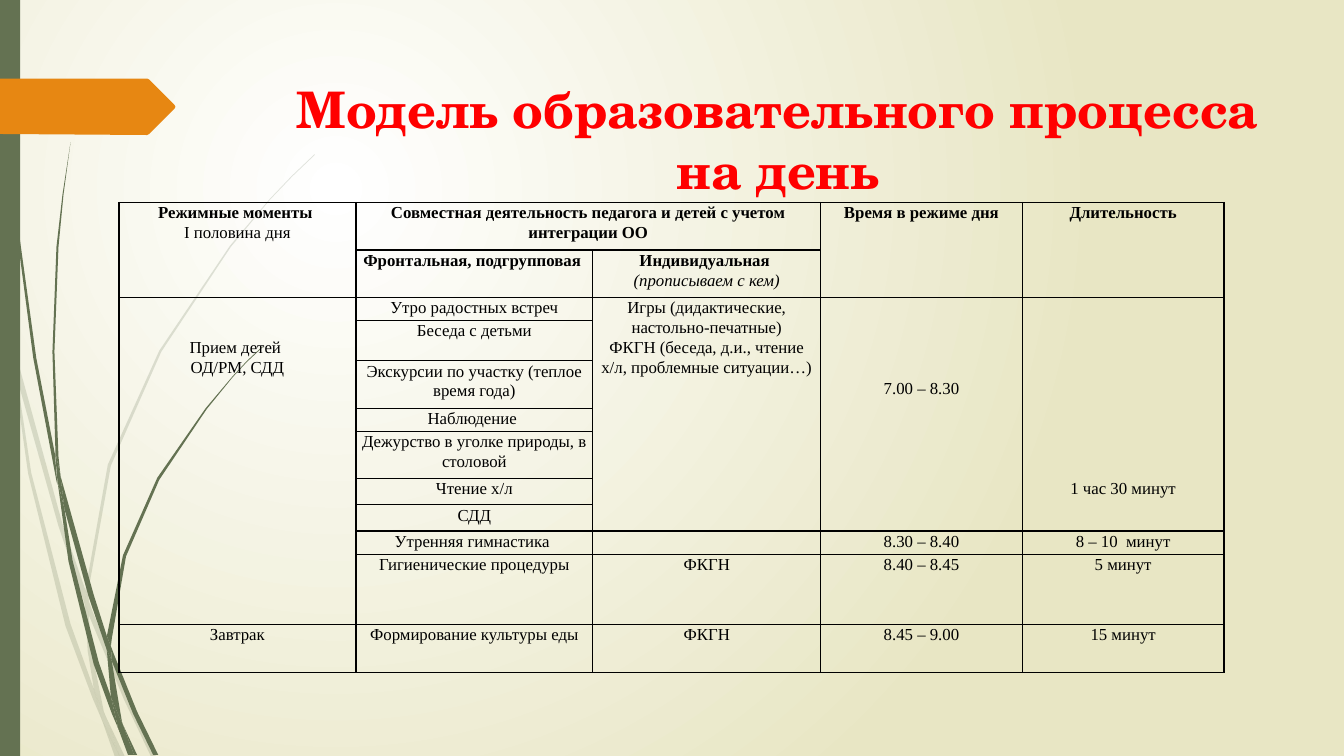
import pptx
import pptx.dml.color
import pptx.enum.shapes
import pptx.enum.text
import pptx.oxml
import pptx.oxml.ns
import pptx.util
from pptx.util import Inches

GREEN = pptx.dml.color.RGBColor(0x64, 0x72, 0x52)
ORANGE = pptx.dml.color.RGBColor(0xE7, 0x87, 0x12)
RED = pptx.dml.color.RGBColor(0xFF, 0x00, 0x00)
BLACK = pptx.dml.color.RGBColor(0x00, 0x00, 0x00)
WHITE = pptx.dml.color.RGBColor(0xFF, 0xFF, 0xFF)
CREAM = pptx.dml.color.RGBColor(0xE8, 0xE6, 0xC4)
NAMESPACE = pptx.oxml.ns.nsdecls("a")

# Outlines of the grass blades, in inches
PALE_BLADES = [
    [(0.11, 3.5), (0.09, 3.22), (0, 2.82), (0, 2.99), (0.1, 3.44)],
    [(0.58, 5.22), (0.84, 5.99), (0.85, 5.86), (0.62, 5.2), (0.14, 3.45), (0.17, 3.76)],
    [(0.92, 6.07), (0.88, 5.96), (0.88, 6.1), (1.23, 6.94), (1.5, 7.51), (1.55, 7.51),
     (1.27, 6.92)],
    [(1.19, 7.51), (1.24, 7.51), (1.05, 7.11)],
    [(0.93, 6.83), (0.7, 6.19), (0.31, 4.69), (0.17, 3.76), (0.11, 3.5), (0.28, 4.7),
     (0.65, 6.21), (0.92, 6.93), (1.01, 7.14), (0.99, 7.07)],
    [(0.84, 5.99), (0.87, 6.46), (0.93, 6.83), (0.96, 6.92), (1.05, 7.11), (1.03, 7.06),
     (0.91, 6.46), (0.88, 6.1), (0.88, 6.08)],
    [(0.88, 5.84), (1.1, 4.62), (1.6, 3.49), (2.29, 2.45), (2.68, 1.98), (2.9, 1.75),
     (3.12, 1.54), (3.12, 1.53), (2.89, 1.75), (2.68, 1.97), (2.28, 2.44), (1.58, 3.48),
     (1.07, 4.61), (0.85, 5.84), (0.85, 5.86), (0.88, 5.96)],
    [(1.01, 7.14), (1.14, 7.51), (1.19, 7.51)],
    [(0.88, 6.08), (0.88, 6.1), (0.88, 5.96), (0.85, 5.86), (0.84, 5.99)],
    [(0.96, 6.92), (0.93, 6.83), (0.99, 7.07), (1.01, 7.14), (1.19, 7.51), (1.05, 7.11)],
]
DARK_BLADES = [
    [(0.07, 1.1), (0.17, 2.33), (0.33, 3.55), (0.56, 4.77), (0.57, 4.81), (0.55, 4.57),
     (0.55, 4.53), (0.36, 3.55), (0.19, 2.32), (0.08, 1.09), (0.05, 0.48), (0.04, 0),
     (0.03, 0), (0.04, 0.48)],
    [(0.88, 5.92), (1.06, 6.45), (1.06, 6.31), (0.93, 5.9), (0.6, 4.72), (0.64, 5.05)],
    [(1.13, 6.49), (1.1, 6.41), (1.11, 6.56), (1.32, 7.08), (1.52, 7.49), (1.57, 7.49),
     (1.36, 7.06)],
    [(1.1, 6.91), (0.98, 6.57), (0.72, 5.56), (0.64, 5.05), (0.57, 4.77), (0.68, 5.57),
     (0.93, 6.59), (1.11, 7.08), (1.17, 7.22), (1.16, 7.17)],
    [(0.6, 4.72), (0.58, 4.53), (0.54, 3.49), (0.58, 2.45), (0.63, 1.93), (0.7, 1.41),
     (0.62, 1.93), (0.56, 2.45), (0.52, 3.49), (0.55, 4.49)],
    [(1.33, 7.49), (1.36, 7.49), (1.22, 7.19)],
    [(0.57, 4.77), (0.64, 5.05), (0.6, 4.72), (0.55, 4.49), (0.55, 4.53)],
    [(1.11, 6.33), (1.25, 5.52), (1.58, 4.76), (2.05, 4.06), (2.31, 3.74), (2.45, 3.59),
     (2.61, 3.44), (2.6, 3.44), (2.45, 3.58), (2.31, 3.73), (2.04, 4.05), (1.56, 4.74),
     (1.22, 5.51), (1.06, 6.31), (1.1, 6.41)],
    [(1.17, 7.22), (1.27, 7.49), (1.31, 7.49)],
    [(1.06, 6.45), (1.1, 6.91), (1.16, 7.06), (1.22, 7.19), (1.21, 7.16), (1.11, 6.56),
     (1.09, 6.51)],
    [(1.06, 6.45), (1.09, 6.51), (1.11, 6.56), (1.1, 6.41), (1.06, 6.31)],
    [(1.16, 7.06), (1.1, 6.91), (1.16, 7.17), (1.17, 7.22), (1.3, 7.49), (1.33, 7.49),
     (1.22, 7.19)],
]
ARROW_TAG = [(0, 0.78), (1.46, 0.78), (1.48, 0.79), (1.73, 1.04), (1.74, 1.06),
             (1.73, 1.08), (1.48, 1.33), (1.46, 1.34), (0, 1.33)]

presentation = pptx.Presentation()
presentation.slide_width = Inches(13.33)
presentation.slide_height = Inches(7.5)
slide = presentation.slides.add_slide(presentation.slide_layouts[6])

# Radial background
background = slide.background.fill
background.gradient()
for stop, color in zip(background.gradient_stops, (WHITE, CREAM)):
    stop.color.rgb = color
linear = slide.background._cSld.find(".//" + pptx.oxml.ns.qn("a:lin"))
linear.getparent().replace(linear, pptx.oxml.parse_xml(
    f'<a:path {NAMESPACE} path="circle">'
    '<a:fillToRect l="50000" t="50000" r="100000" b="100000"/></a:path>'))


def paint(shape, color):
    shape.shadow.inherit = False
    shape.fill.solid()
    shape.fill.fore_color.rgb = color
    shape.line.fill.background()


def add_outline(points, color):
    corners = [(Inches(x), Inches(y)) for x, y in points]
    builder = slide.shapes.build_freeform(*corners[0])
    builder.add_line_segments(corners[1:], close=True)
    shape = builder.convert_to_shape()
    paint(shape, color)
    return shape


# Left decoration
for points in PALE_BLADES:
    blade = add_outline(points, GREEN)
    blade_color = blade._element.spPr.find(".//" + pptx.oxml.ns.qn("a:srgbClr"))
    blade_color.append(pptx.oxml.parse_xml(f'<a:alpha {NAMESPACE} val="20000"/>'))
for points in DARK_BLADES:
    add_outline(points, GREEN)
side_bar = slide.shapes.add_shape(pptx.enum.shapes.MSO_SHAPE.RECTANGLE,
                                  0, 0, Inches(0.2), Inches(7.5))
paint(side_bar, GREEN)
add_outline(ARROW_TAG, ORANGE)

# Title
title = slide.shapes.add_textbox(Inches(2.84), Inches(0.68), Inches(9.75), Inches(1.4))
title.text_frame.word_wrap = True
title.text_frame.vertical_anchor = pptx.enum.text.MSO_ANCHOR.MIDDLE
title.text_frame.text = "Модель образовательного процесса на день"
paragraph = title.text_frame.paragraphs[0]
paragraph.alignment = pptx.enum.text.PP_ALIGN.CENTER
font = paragraph.runs[0].font
font.name, font.size, font.bold = "TeX Gyre Schola", pptx.util.Pt(36), True
font.color.rgb = RED

# Daily schedule
COLUMN_WIDTHS = [2.35, 2.35, 2.26, 2, 2]
ROW_HEIGHTS = [0.47, 0.47, 0.23, 0.4, 0.47, 0.23, 0.47, 0.26, 0.26, 0.23, 0.7, 0.47]
SCHEDULE = [
    ["Режимные моменты \nI половина дня",
     "Совместная деятельность педагога и детей с учетом интеграции ОО", "",
     "Время в режиме дня", "Длительность"],
    ["", "Фронтальная, подгрупповая ", "Индивидуальная \n(прописываем с кем)", "", ""],
    ["Прием детей \nОД/РМ, СДД", "Утро радостных встреч",
     "Игры (дидактические, настольно-печатные)\n"
     "ФКГН (беседа, д.и., чтение х/л, проблемные ситуации…)",
     "7.00 – 8.30", "1 час 30 минут"],
    ["", "Беседа с детьми", "", "", ""],
    ["", "Экскурсии по участку (теплое время года)", "", "", ""],
    ["", "Наблюдение ", "", "", ""],
    ["", "Дежурство в уголке природы, в столовой", "", "", ""],
    ["", "Чтение х/л", "", "", ""],
    ["", "СДД", "", "", ""],
    ["", "Утренняя гимнастика ", "", "8.30 – 8.40", "8 – 10  минут"],
    ["", "Гигиенические процедуры", "ФКГН", "8.40 – 8.45", "5 минут"],
    ["Завтрак", "Формирование культуры еды", "ФКГН", "8.45 – 9.00", "15 минут"],
]
MERGES = [((0, 0), (1, 0)), ((0, 1), (0, 2)), ((0, 3), (1, 3)), ((0, 4), (1, 4)),
          ((2, 0), (10, 0)), ((2, 2), (8, 2)), ((2, 3), (8, 3)), ((2, 4), (8, 4))]
TOP_MARGINS = {(2, 0): 0.4, (2, 3): 0.8, (2, 4): 1.8}
HEADER_ROWS = 2

table = slide.shapes.add_table(len(ROW_HEIGHTS), len(COLUMN_WIDTHS), Inches(1.18),
                               Inches(2.01), Inches(10.96), Inches(4.66)).table
table.first_row = table.horz_banding = False
for column, width in zip(table.columns, COLUMN_WIDTHS):
    column.width = Inches(width)
for row, height in zip(table.rows, ROW_HEIGHTS):
    row.height = Inches(height)
for start, end in MERGES:
    table.cell(*start).merge(table.cell(*end))

for row_index, row_texts in enumerate(SCHEDULE):
    for column_index, text in enumerate(row_texts):
        cell = table.cell(row_index, column_index)
        cell.margin_left = cell.margin_right = Inches(0.06)
        cell.margin_top = Inches(TOP_MARGINS.get((row_index, column_index), 0))
        cell.margin_bottom = 0
        for side in ("lnL", "lnR", "lnT", "lnB"):
            cell._tc.get_or_add_tcPr().append(pptx.oxml.parse_xml(
                f'<a:{side} {NAMESPACE} w="12700"><a:solidFill>'
                f'<a:srgbClr val="{BLACK}"/></a:solidFill></a:{side}>'))
        cell.fill.background()
        cell.text_frame.text = text
        for line_index, paragraph in enumerate(cell.text_frame.paragraphs):
            paragraph.alignment = pptx.enum.text.PP_ALIGN.CENTER
            paragraph.line_spacing = 1.07
            if not text:
                paragraph._p.get_or_add_endParaRPr().set("sz", "1200")
            for run in paragraph.runs:
                run.font.name = "Times New Roman"
                run.font.size = pptx.util.Pt(12)
                run.font.color.rgb = BLACK
                run.font.bold = row_index < HEADER_ROWS and line_index == 0
                run.font.italic = row_index == 1 and line_index == 1

presentation.save("out.pptx")
